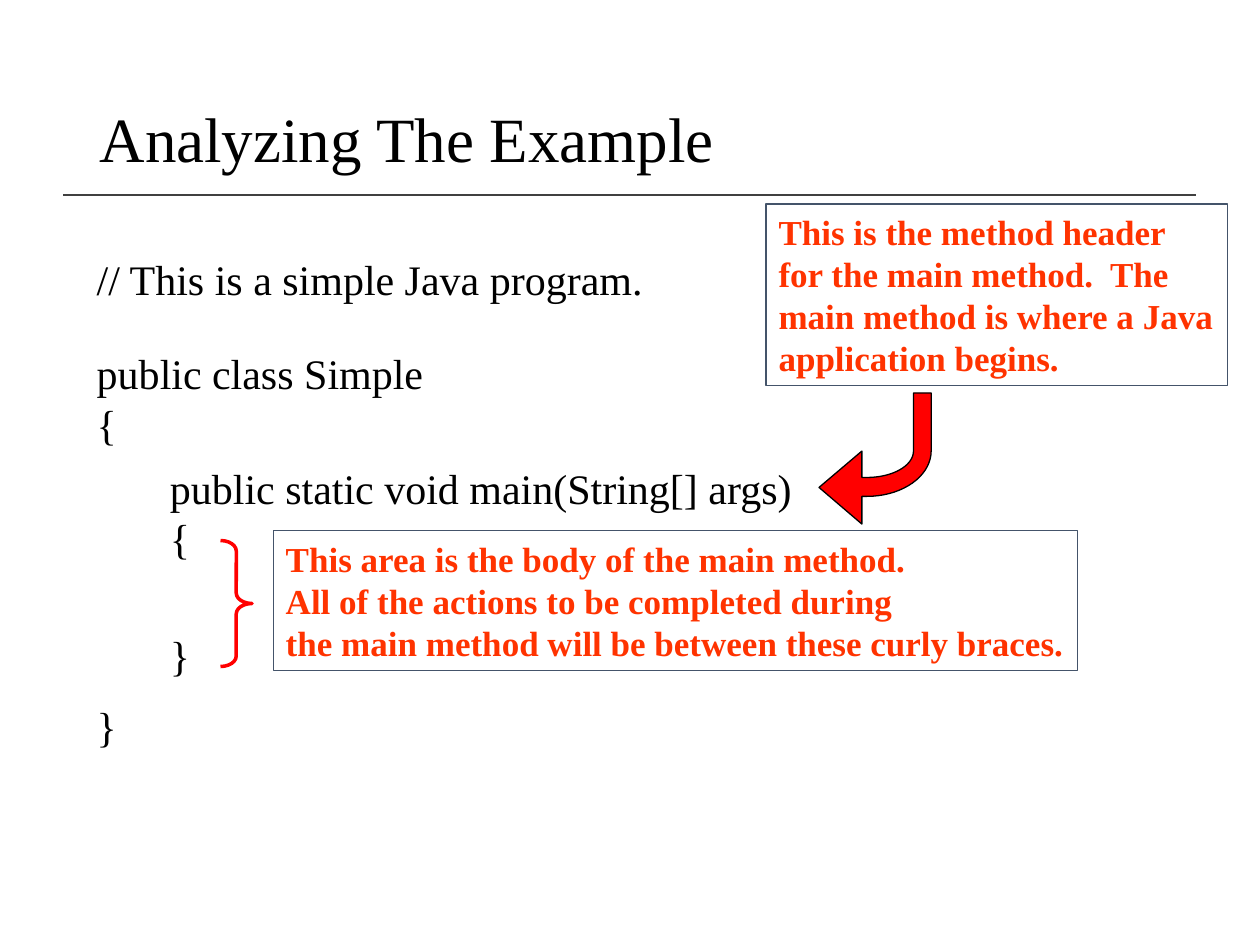
import math
import pptx
import pptx.util
import pptx.oxml.ns
import pptx.dml.color
import pptx.enum.shapes
import pptx.enum.text
import lxml.etree

Pt = pptx.util.Pt
KIND = pptx.enum.shapes.MSO_SHAPE
ANCHOR = pptx.enum.text.MSO_ANCHOR
ALIGN = pptx.enum.text.PP_ALIGN
INK = {"text": "000000", "rule": "404040", "note": "FF3300",
       "frame": "44546A", "mark": "FF0000"}


class Page:
    font = "Times New Roman"

    def __init__(self, deck):
        self.slide = deck.slides.add_slide(deck.slide_layouts[5])
        self.home = self.slide.shapes

    def group(self):
        """Put the next elements in a new group."""
        self.home = self.slide.shapes.add_group_shape().shapes

    def color(self, name):
        return pptx.dml.color.RGBColor.from_string(INK[name])

    def label(self, frame, lines, size, ink="text", bold=False, wrap=False):
        """Set lines; a line is a text or a (text, space before) pair."""
        frame.word_wrap = wrap
        for i, line in enumerate(lines):
            text, gap = line if isinstance(line, tuple) else (line, 0)
            para = frame.paragraphs[0] if i == 0 else frame.add_paragraph()
            para.alignment = ALIGN.LEFT
            para.space_before = Pt(gap)
            run = para.add_run()
            run.text = text
            run.font.name = self.font
            run.font.size = Pt(size)
            run.font.bold = bold
            run.font.color.rgb = self.color(ink)

    def stroke(self, line, ink, width):
        line.color.rgb = self.color(ink)
        line.width = Pt(width)

    def title(self, text, x, y, w, h):
        box = self.slide.shapes.title
        box.left, box.top, box.width, box.height = map(Pt, (x, y, w, h))
        box.text_frame.vertical_anchor = ANCHOR.MIDDLE
        self.label(box.text_frame, [text], 36, wrap=True)
        box.text_frame.paragraphs[0].line_spacing = 0.9

    def rule(self, x1, x2, y):
        line = self.home.add_connector(
            pptx.enum.shapes.MSO_CONNECTOR.STRAIGHT,
            Pt(x1), Pt(y), Pt(x2), Pt(y))
        self.stroke(line.line, "rule", 1)
        lxml.etree.SubElement(line._element.spPr,
                              pptx.oxml.ns.qn("a:effectLst"))

    def code(self, lines, x, y, w, h):
        box = self.home.add_textbox(*map(Pt, (x, y, w, h)))
        self.label(box.text_frame, lines, 24)

    def shape(self, kind, x, y, w, h, ink, width):
        item = self.home.add_shape(kind, *map(Pt, (x, y, w, h)))
        item.shadow.inherit = False
        item.fill.background()
        self.stroke(item.line, ink, width)
        return item

    def note(self, lines, x, y, w, h):
        item = self.shape(KIND.RECTANGLE, x, y, w, h, "frame", 0.75)
        item.text_frame.vertical_anchor = ANCHOR.MIDDLE
        self.label(item.text_frame, lines, 20, "note", True)

    def brace(self, x, y, w, h):
        item = self.shape(KIND.RIGHT_BRACE, x, y, w, h, "mark", 2)
        item.adjustments[0] = 0.33

    def arrow(self):
        """Draw a stem that bends from down to left and ends in a head."""
        cx, cy, top, neck = 495.4, 257.8, 224.6, 492.5

        def arc(rx, ry, turns):
            return [(cx + rx * math.cos(math.radians(t)),
                     cy + ry * math.sin(math.radians(t))) for t in turns]

        outer = arc(36.7, 25.9, range(90, -1, -5))
        inner = arc(26.6, 15.1, range(0, 91, 5))
        points = [(468, 278.6), (neck, 299.5), (neck, outer[0][1]), *outer,
                  (outer[-1][0], top), (inner[0][0], top), *inner,
                  (neck, inner[-1][1]), (neck, 257.8)]
        points = [(Pt(x), Pt(y)) for x, y in points]
        outline = self.home.build_freeform(*points[0])
        outline.add_line_segments(points[1:], close=True)
        item = outline.convert_to_shape()
        item.shadow.inherit = False
        item.fill.solid()
        item.fill.fore_color.rgb = self.color("mark")
        self.stroke(item.line, "text", 0.75)


def main():
    deck = pptx.Presentation()
    deck.slide_width, deck.slide_height = Pt(720), Pt(540)
    page = Page(deck)

    # Heading
    page.rule(36, 683.3, 111.6)
    page.title("Analyzing The Example", 49.7, 28.8, 620.6, 104.4)

    # Program
    page.code(["// This is a simple Java program."], 48.2, 141.1, 326.9, 41.8)
    page.group()
    page.code(["public class Simple", "{", ("}", 144)],
              48.2, 195.1, 234, 243.4)
    page.code(["public static void main(String[] args)", "{", ("}", 38)],
              90, 260.6, 370, 168.5)

    # Body of the method
    page.group()
    page.note(["This area is the body of the main method.",
               "All of the actions to be completed during",
               "the main method will be between these curly braces."],
              156.2, 303.1, 459.4, 79.9)
    page.brace(126, 308.9, 18, 72)

    # Header of the method
    page.group()
    page.note(["This is the method header",
               "for the main method.  The",
               "main method is where a Java",
               "application begins."],
              437.8, 116.6, 263.5, 103.7)
    page.arrow()

    deck.save("out.pptx")


if __name__ == "__main__":
    main()
